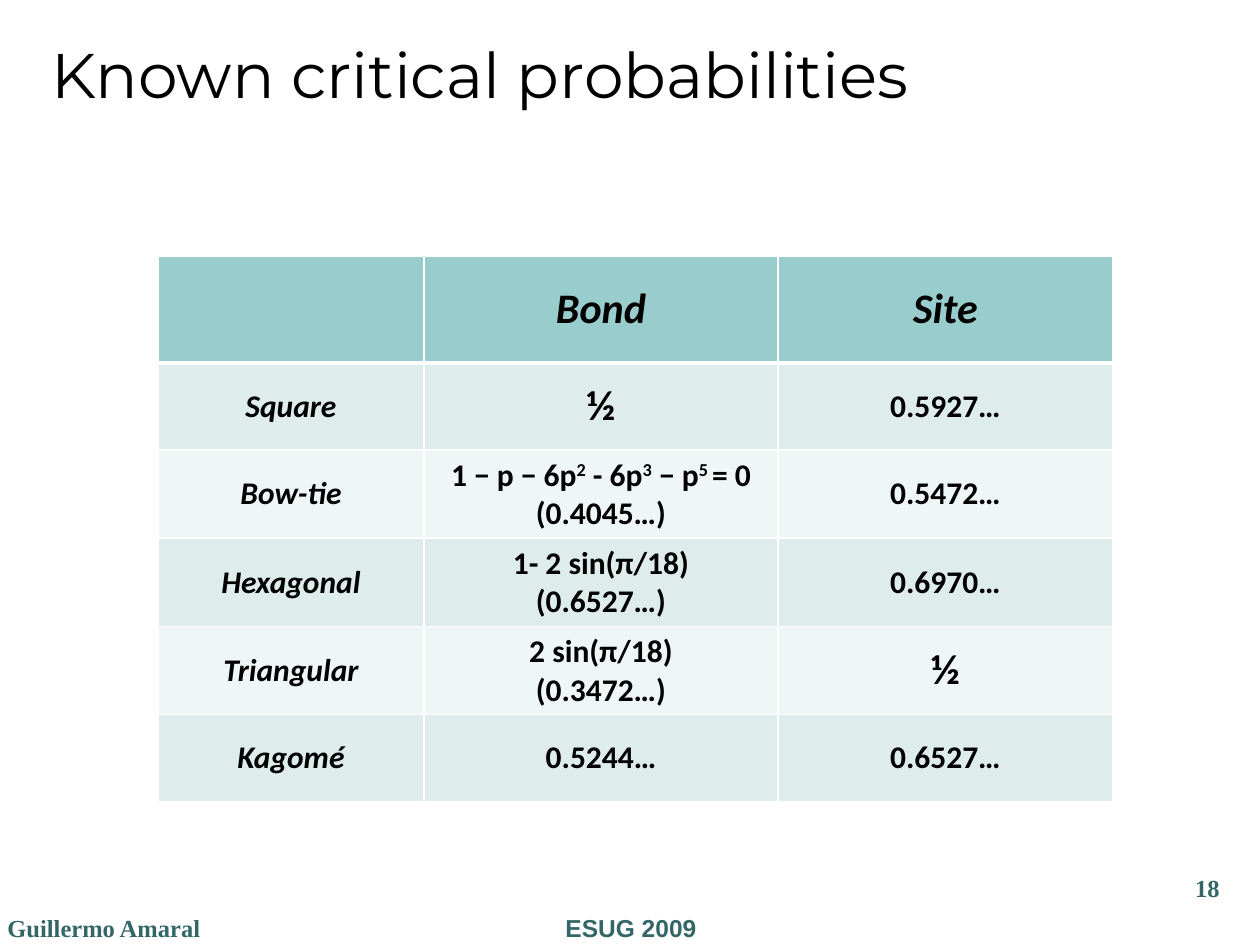
from dataclasses import dataclass

from lxml.etree import SubElement
from pptx import Presentation
from pptx.dml.color import RGBColor
from pptx.enum.text import MSO_ANCHOR, PP_ALIGN
from pptx.oxml.ns import qn
from pptx.slide import Slide
from pptx.table import _Cell
from pptx.text.text import Font, _Paragraph
from pptx.util import Emu, Pt

PX = 914400 / 126
BLACK, TEAL, WHITE = "000000", "336666", "FFFFFF"
HEADER_FILL, BAND_FILLS = "99CCCC", ("DEECEC", "EFF6F6")
COLUMN_WIDTHS = (266, 354, 335)
HEADER_HEIGHT, ROW_HEIGHT = 107, 87

# Text between a pair of ^ marks is superscript.
ROWS = (
    ("", "Bond", "Site"),
    ("Square", "½", "0.5927…"),
    ("Bow-tie", "1 − p − 6p^2^ - 6p^3^ − p^5 ^= 0\n(0.4045…)", "0.5472…"),
    ("Hexagonal", "1- 2 sin(π/18)\n(0.6527…)", "0.6970…"),
    ("Triangular", "2 sin(π/18)\n(0.3472…)", "½"),
    ("Kagomé", "0.5244…", "0.6527…"),
)


@dataclass(frozen=True)
class Label:
    text: str
    left: int
    top: int
    width: int
    height: int
    font: str
    size: int
    color: str = TEAL
    bold: bool = True
    align: PP_ALIGN = PP_ALIGN.LEFT
    anchor: MSO_ANCHOR = MSO_ANCHOR.TOP


LABELS = (
    Label("Known critical probabilities", 39, 29, 1221, 178, "Montserrat", 36,
          color=BLACK, bold=False),
    Label("Guillermo Amaral", -5, 908, 400, 40, "Times New Roman", 14,
          anchor=MSO_ANCHOR.MIDDLE),
    Label("ESUG 2009", 431, 908, 400, 40, "Arial", 14,
          align=PP_ALIGN.CENTER, anchor=MSO_ANCHOR.MIDDLE),
    Label("18", 1053, 867, 179, 49, "Times New Roman", 14, align=PP_ALIGN.RIGHT),
)


def px(length: int) -> Emu:
    return Emu(round(length * PX))


def rgb(color: str) -> RGBColor:
    return RGBColor.from_string(color)


def style_font(font: Font, name: str, size: int, color: str, bold: bool,
               italic: bool = False) -> None:
    font.name, font.size, font.bold, font.italic = name, Pt(size), bold, italic
    font.color.rgb = rgb(color)


def add_label(slide: Slide, label: Label) -> None:
    shape = slide.shapes.add_textbox(
        px(label.left), px(label.top), px(label.width), px(label.height))
    frame = shape.text_frame
    frame.word_wrap = True
    frame.vertical_anchor = label.anchor
    paragraph = frame.paragraphs[0]
    paragraph.text = label.text
    paragraph.alignment = label.align
    style_font(paragraph.font, label.font, label.size, label.color, label.bold)


def add_marked_runs(paragraph: _Paragraph, text: str) -> None:
    for index, part in enumerate(text.split("^")):
        run = paragraph.add_run()
        run.text = part
        if index % 2:
            run.font._element.set("baseline", "30000")


def set_border(cell: _Cell, side: str, points: int) -> None:
    properties = cell._tc.get_or_add_tcPr()
    line = SubElement(properties, qn(f"a:ln{side}"), w=str(Pt(points)))
    fill = SubElement(line, qn("a:solidFill"))
    SubElement(fill, qn("a:srgbClr"), val=WHITE)


def fill_cell(cell: _Cell, text: str, row: int, column: int) -> None:
    widths = {"L": 1, "R": 1, "T": 3 if row == 1 else 1, "B": 3 if row == 0 else 1}
    for side, points in widths.items():
        set_border(cell, side, points)
    cell.fill.solid()
    cell.fill.fore_color.rgb = rgb(BAND_FILLS[(row - 1) % 2] if row else HEADER_FILL)
    cell.vertical_anchor = MSO_ANCHOR.MIDDLE
    if not text:
        return
    size = 24 if row == 0 or text == "½" else 18
    for index, line in enumerate(text.split("\n")):
        frame = cell.text_frame
        paragraph = frame.add_paragraph() if index else frame.paragraphs[0]
        add_marked_runs(paragraph, line)
        paragraph.alignment = PP_ALIGN.CENTER
        style_font(paragraph.font, "Calibri", size, BLACK, True,
                   italic=row == 0 or column == 0)


def add_probability_table(slide: Slide) -> None:
    heights = [HEADER_HEIGHT] + [ROW_HEIGHT] * (len(ROWS) - 1)
    table = slide.shapes.add_table(
        len(ROWS), len(COLUMN_WIDTHS), px(158), px(256),
        px(sum(COLUMN_WIDTHS)), px(sum(heights))).table
    table.first_row = table.horz_banding = False
    for column, width in zip(table.columns, COLUMN_WIDTHS):
        column.width = px(width)
    for row, (height, texts) in enumerate(zip(heights, ROWS)):
        table.rows[row].height = px(height)
        for column, text in enumerate(texts):
            fill_cell(table.cell(row, column), text, row, column)


def main() -> None:
    presentation = Presentation()
    presentation.slide_width, presentation.slide_height = px(1260), px(945)
    slide = presentation.slides.add_slide(presentation.slide_layouts[6])
    for label in LABELS:
        add_label(slide, label)
    add_probability_table(slide)
    presentation.save("out.pptx")


if __name__ == "__main__":
    main()
